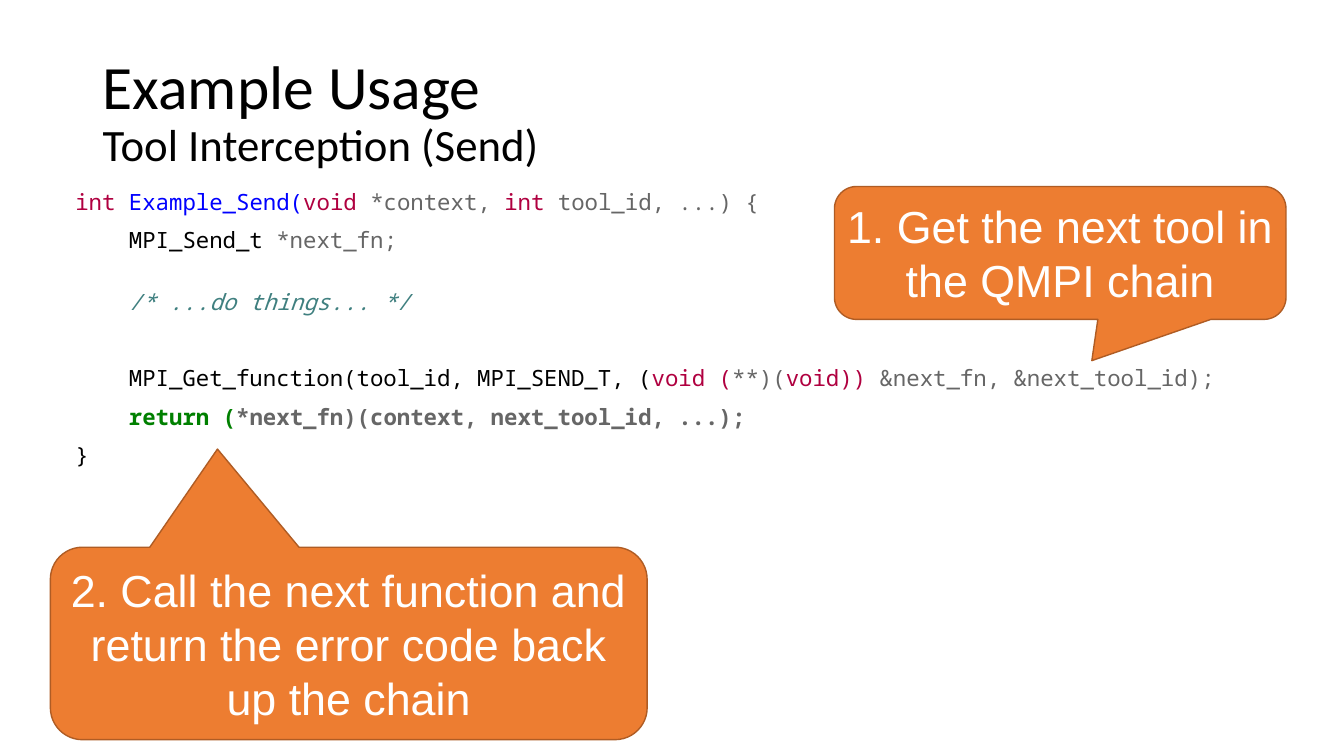
from pptx import Presentation
from pptx.dml.color import RGBColor
from pptx.enum.shapes import MSO_SHAPE
from pptx.enum.text import MSO_ANCHOR, PP_ALIGN
from pptx.util import Cm, Pt

CALLOUT = MSO_SHAPE.ROUNDED_RECTANGULAR_CALLOUT
MIDDLE, TOP = MSO_ANCHOR.MIDDLE, MSO_ANCHOR.TOP
CENTER = PP_ALIGN.CENTER

THEME = {
    "colors": {
        "plain": "000000", "type": "B00040", "function": "0000FF",
        "muted": "666666", "comment": "408080", "keyword": "008000",
        "callout": "ED7D31", "outline": "AF5C24", "callout text": "FFFFFF",
    },
    "sizes": {"title": 44, "subtitle": 32, "code": 16, "callout": 32},
    "fonts": {"title": "Calibri", "code": "Noto Sans Mono", "callout": "Arial"},
}


def color(name):
    return RGBColor.from_string(THEME["colors"][name])


def add_run(paragraph, text, font, size, color_name, **styles):
    run = paragraph.add_run()
    run.text = text
    run.font.color.rgb = color(color_name)
    formats = {"name": THEME["fonts"][font], "size": Pt(THEME["sizes"][size]), **styles}
    for attribute, value in formats.items():
        setattr(run.font, attribute, value)


presentation = Presentation()
presentation.slide_width, presentation.slide_height = Cm(33.87), Cm(19.05)
slide = presentation.slides.add_slide(presentation.slide_layouts[6])

# Text areas for the code and the title
frames = {}
for name, box, anchor in [
    ("code", (1.65, 4.7, 30.48, 12.65), TOP),
    ("title", (2.34, 1.02, 29.21, 3.68), MIDDLE),
]:
    frames[name] = slide.shapes.add_textbox(*map(Cm, box)).text_frame
    frames[name].word_wrap = True
    frames[name].vertical_anchor = anchor

# Title and subtitle
paragraph = frames["title"].paragraphs[0]
paragraph.line_spacing = 0.9
add_run(paragraph, "Example Usage", "title", "title", "plain")
paragraph.add_line_break()
add_run(paragraph, "Tool Interception (Send)", "title", "subtitle", "plain")

# Code lines: space before in points, indent level, bold, coloured pieces
code_lines = [
    (0, 0, False, [("int ", "type"), ("Example_Send(", "function"), ("void ", "type"),
                   ("*context, ", "muted"), ("int ", "type"),
                   ("tool_id, ...) {", "muted")]),
    (10, 1, False, [("MPI_Send_t ", "plain"), ("*next_fn;", "muted")]),
    (27, 1, False, [("/* ...do things... */", "comment")]),
    (37, 1, False, [("MPI_Get_function(tool_id, MPI_SEND_T, (", "plain"),
                    ("void (", "type"), ("**)(", "muted"), ("void)) ", "type"),
                    ("&next_fn, &next_tool_id);", "muted")]),
    (10, 1, True, [("return (", "keyword"),
                   ("*next_fn)(context, next_tool_id, ...);", "muted")]),
    (10, 0, False, [("}", "plain")]),
]
for index, (space, level, bold, pieces) in enumerate(code_lines):
    code = frames["code"]
    paragraph = code.add_paragraph() if index else code.paragraphs[0]
    paragraph.line_spacing = 0.9
    paragraph.space_before = Pt(space)
    paragraph._p.get_or_add_pPr().set("marL", str(Cm(1.35) * level))
    for text, color_name in pieces:
        add_run(paragraph, text, "code", "code", color_name,
                bold=bold, italic=color_name == "comment")

# Callouts: box, pointer tip relative to the centre, text
for box, tip, text in [
    ((21.03, 4.7, 11.38, 3.35), (0.07, 0.81),
     "1. Get the next tool in the QMPI chain"),
    ((1.27, 13.79, 15.04, 4.85), (-0.22, -1.01),
     "2. Call the next function and return the error code back up the chain"),
]:
    shape = slide.shapes.add_shape(CALLOUT, *map(Cm, box))
    shape.shadow.inherit = False
    shape.adjustments[0], shape.adjustments[1] = tip
    shape.fill.solid()
    shape.fill.fore_color.rgb = color("callout")
    shape.line.color.rgb = color("outline")
    shape.line.width = Pt(1)
    frame = shape.text_frame
    frame_formats = {"word_wrap": True, "vertical_anchor": MIDDLE}
    for side in ("left", "top", "right", "bottom"):
        frame_formats[f"margin_{side}"] = Cm(0.15)
    for attribute, value in frame_formats.items():
        setattr(frame, attribute, value)
    paragraph = frame.paragraphs[0]
    paragraph.alignment = CENTER
    add_run(paragraph, text, "callout", "callout", "callout text")

presentation.save("out.pptx")
